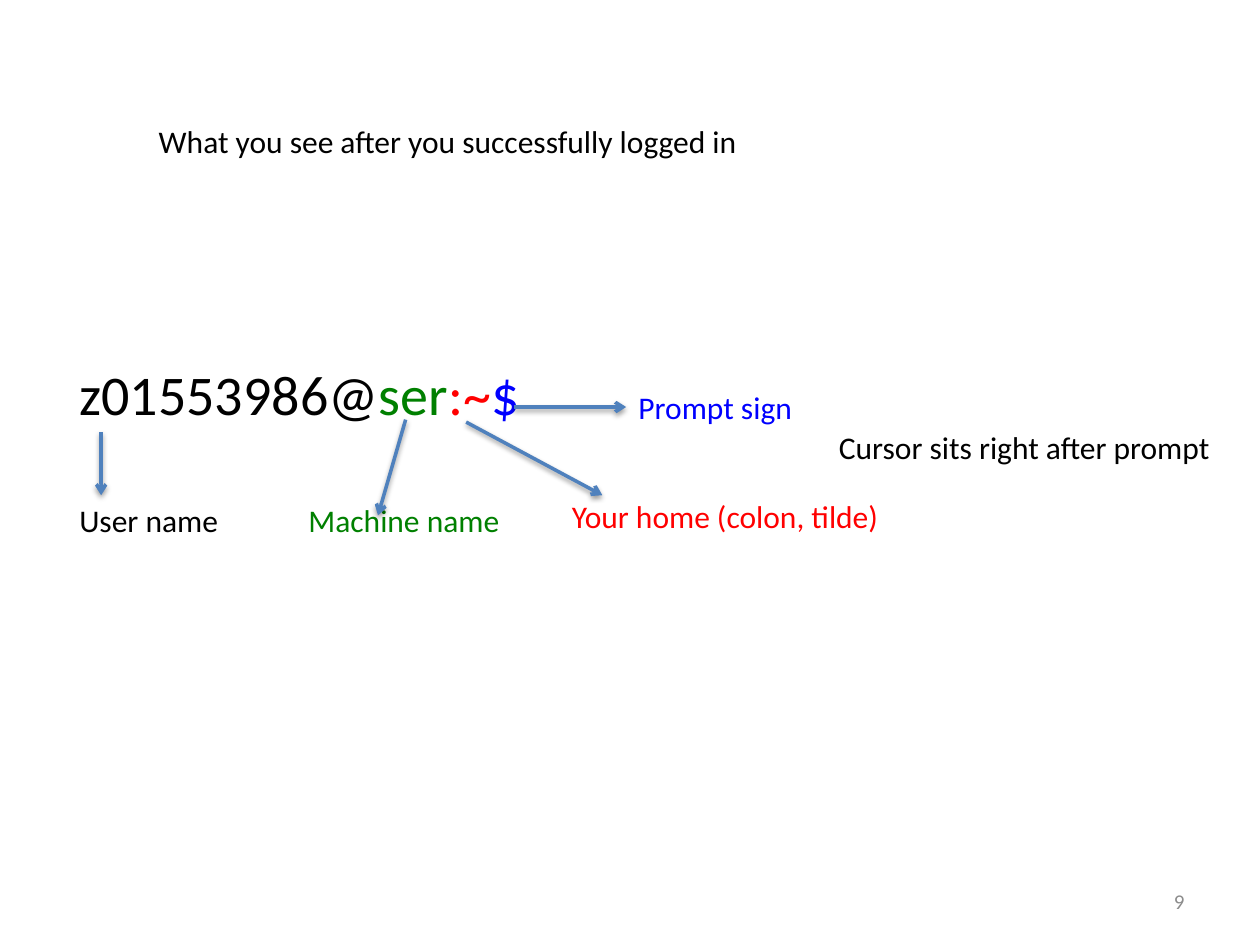
import pptx
import pptx.dml.color
import pptx.enum.shapes
import pptx.enum.text
import pptx.oxml
import pptx.oxml.ns
import pptx.util
from dataclasses import dataclass

Pt = pptx.util.Pt
ALIGN = pptx.enum.text.PP_ALIGN
ANCHOR = pptx.enum.text.MSO_ANCHOR
AUTO_SIZE = pptx.enum.text.MSO_AUTO_SIZE


@dataclass(frozen=True)
class Theme:
    font: str = "Calibri"
    black: str = "000000"
    green: str = "008000"
    red: str = "FF0000"
    blue: str = "0000FF"
    gray: str = "8C8C8C"
    arrow: str = "4F81BD"
    prompt_size: int = 32
    label_size: int = 18
    number_size: int = 12
    arrow_width: int = 2


THEME = Theme()


def rgb(color):
    return pptx.dml.color.RGBColor.from_string(color)


def fill_text(sp, runs, size, align=ALIGN.LEFT):
    tf = sp.text_frame
    tf.word_wrap = False
    tf.auto_size = AUTO_SIZE.SHAPE_TO_FIT_TEXT
    tf.vertical_anchor = ANCHOR.TOP
    p = tf.paragraphs[0]
    p.alignment = align
    for text, color in runs:
        r = p.add_run()
        r.text = text
        r.font.name = THEME.font
        r.font.size = Pt(size)
        r.font.color.rgb = rgb(color)


def add_text(s, box, runs, size=THEME.label_size):
    sp = s.shapes.add_textbox(*map(Pt, box))
    fill_text(sp, runs, size)


def add_title(s, box, text):
    sp = s.shapes.title
    sp.left, sp.top, sp.width, sp.height = map(Pt, box)
    fill_text(sp, [(text, THEME.black)], THEME.label_size)


def add_page_number(s, box, text):
    sp = s.shapes.add_textbox(*map(Pt, box))
    fill_text(sp, [(text, THEME.gray)], THEME.number_size, ALIGN.RIGHT)
    tf = sp.text_frame
    tf.word_wrap = True
    tf.auto_size = AUTO_SIZE.NONE
    tf.vertical_anchor = ANCHOR.MIDDLE


def add_arrow(s, x1, y1, x2, y2):
    straight = pptx.enum.shapes.MSO_CONNECTOR.STRAIGHT
    sp = s.shapes.add_connector(straight, Pt(x1), Pt(y1), Pt(x2), Pt(y2))
    sp.line.color.rgb = rgb(THEME.arrow)
    sp.line.width = Pt(THEME.arrow_width)
    ns = pptx.oxml.ns.nsdecls("a")
    tail = pptx.oxml.parse_xml(f'<a:tailEnd {ns} type="arrow"/>')
    sp.line._get_or_add_ln().append(tail)
    shadow = pptx.oxml.parse_xml(
        f'<a:effectLst {ns}><a:outerShdw blurRad="{Pt(3.1)}" dist="{Pt(1.6)}" '
        f'dir="5400000" rotWithShape="0"><a:srgbClr val="{THEME.black}">'
        '<a:alpha val="38000"/></a:srgbClr></a:outerShdw></a:effectLst>')
    sp._element.spPr.append(shadow)


def main():
    prs = pptx.Presentation()
    prs.slide_width, prs.slide_height = Pt(720), Pt(540)
    s = prs.slides.add_slide(prs.slide_layouts[5])

    add_title(s, (83.5, 66.2, 349.2, 29),
              "What you see after you successfully logged in")
    add_page_number(s, (516, 500.5, 168, 28.75), "9")

    prompt = [("z01553986@", THEME.black), ("ser", THEME.green),
              (":~", THEME.red), ("$", THEME.blue)]
    add_text(s, (38.2, 201.6, 268.6, 46), prompt, THEME.prompt_size)

    labels = [
        (38.2, 283, 94.3, "User name", THEME.black),
        (169.2, 283, 124.6, "Machine name", THEME.green),
        (319.7, 280.4, 192.2, "Your home (colon, tilde)", THEME.red),
        (357.8, 218.2, 103.7, "Prompt sign", THEME.blue),
        (472.3, 241.2, 229.7, "Cursor sits right after prompt", THEME.black),
    ]
    for x, y, w, text, color in labels:
        add_text(s, (x, y, w, 29), [(text, color)])

    arrows = [
        (57.8, 247, 57.8, 283),
        (231.8, 239.8, 216, 294.5),
        (266.4, 241.2, 344.2, 283),
        (293.8, 232.6, 357.8, 232.6),
    ]
    for ends in arrows:
        add_arrow(s, *ends)

    prs.save("out.pptx")


if __name__ == "__main__":
    main()
